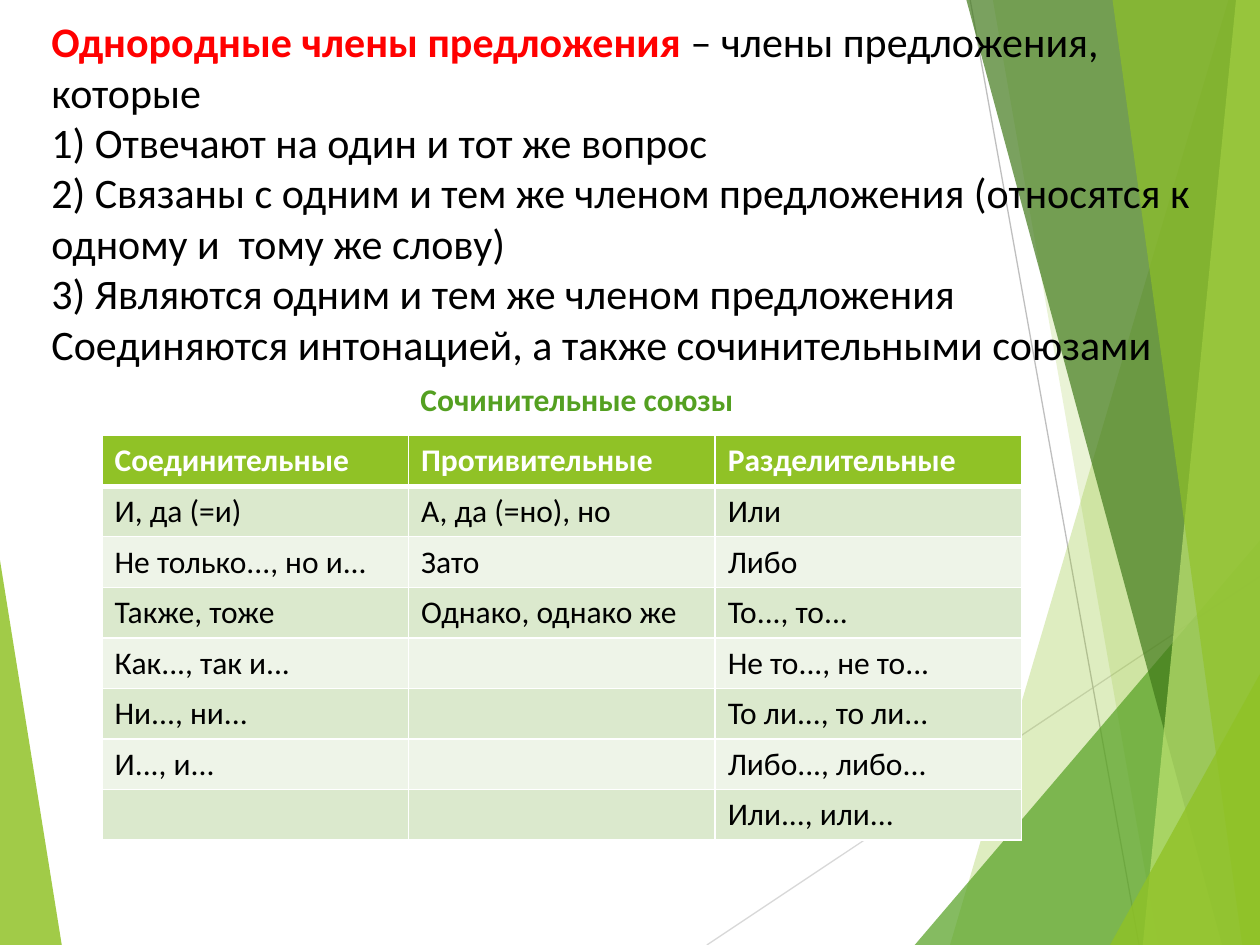
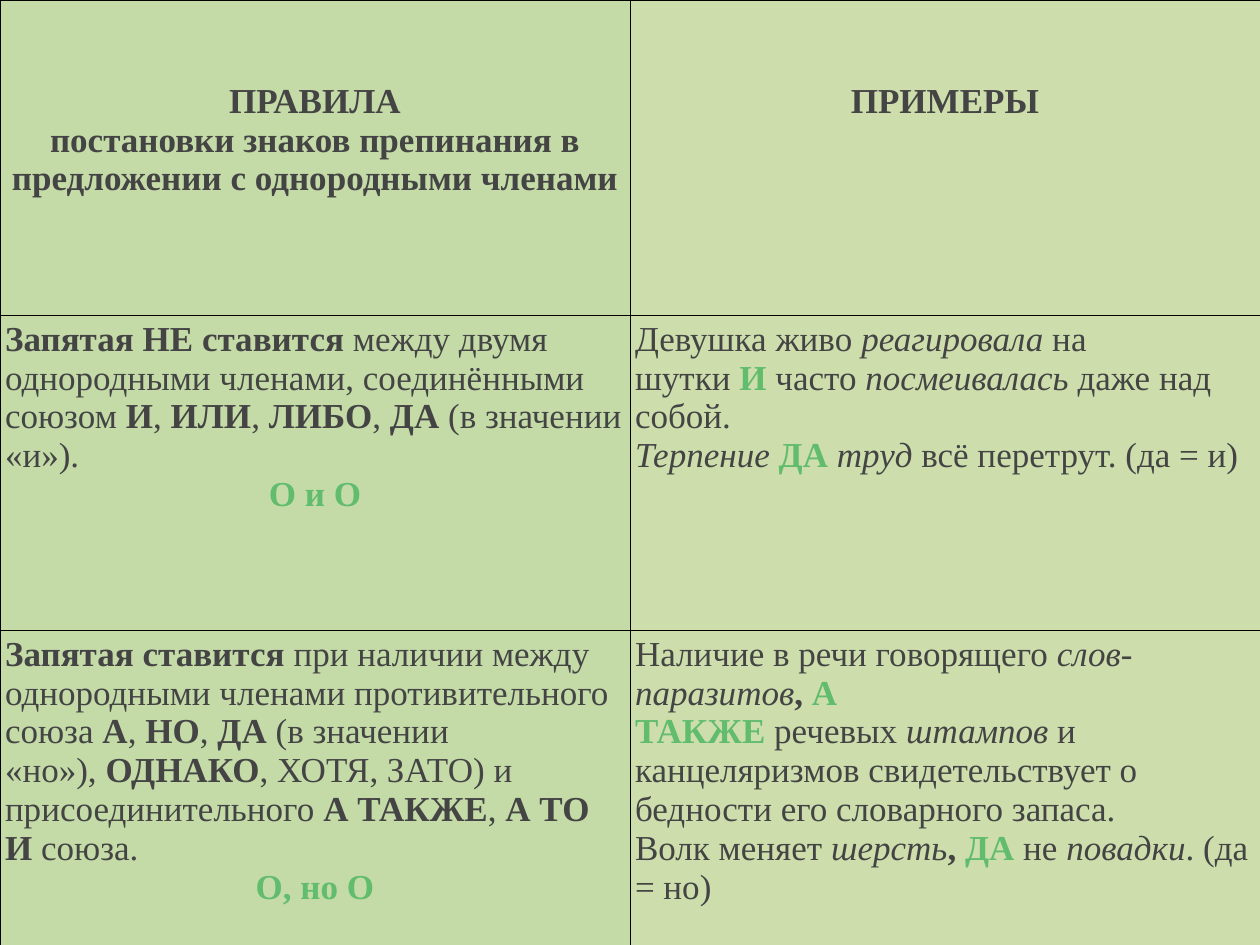
from lxml import etree
from pptx import Presentation
from pptx.dml.color import RGBColor
from pptx.enum.shapes import MSO_CONNECTOR
from pptx.enum.text import PP_ALIGN
from pptx.oxml.ns import qn
from pptx.util import Inches, Pt

STRAIGHT = MSO_CONNECTOR.STRAIGHT
CENTER, LEFT = PP_ALIGN.CENTER, PP_ALIGN.LEFT
rgb = RGBColor.from_string

LIME, GREEN, WHITE, BLACK = "90C226", "54A021", "FFFFFF", "000000"
SANS, SERIF = "Calibri", "Times New Roman"

# Each run starts with a mark: bold, italic, own colour
MARKS = {
    "-": (False, False, None),
    "*": (True, False, None),
    "/": (False, True, None),
    "+": (True, False, "61BD6D"),
    "!": (True, False, "FF0000"),
}
NBSP = chr(160)  # written as ~ in the texts below


def write(tf, lines, font, size, color, align=LEFT):
    """Fill a text frame with paragraphs of marked runs divided by |."""
    tf.word_wrap = True
    for i, line in enumerate(lines):
        p = tf.paragraphs[0] if i == 0 else tf.add_paragraph()
        p.alignment = CENTER if line.startswith("+") else align
        for part in line.split("|"):
            bold, italic, own_color = MARKS[part[0]]
            r = p.add_run()
            r.text = part[1:].replace("~", NBSP)
            r.font.name, r.font.size = font, Pt(size)
            r.font.bold, r.font.italic = bold, italic
            r.font.color.rgb = rgb(own_color or color)


def style_cell(cell, fill, line, widths):
    """Set the cell's fill and its left, right, top and bottom borders."""
    tcPr = cell._tc.get_or_add_tcPr()
    for side, width in zip("LRTB", widths):
        ln = etree.SubElement(tcPr, qn("a:ln" + side), w=str(Pt(width)))
        solid = etree.SubElement(ln, qn("a:solidFill"))
        etree.SubElement(solid, qn("a:srgbClr"), val=line)
    cell.fill.solid()
    cell.fill.fore_color.rgb = rgb(fill)


prs = Presentation()
prs.slide_width, prs.slide_height = Inches(10), Inches(7.5)
W, H = prs.slide_width, prs.slide_height
blank = prs.slide_layouts[6]
s = prs.slides.add_slide(blank)

# Shared backdrop: points in thousandths of the slide's width and height
RAYS = [
    ((561, 1000), (1000, 610), "D8D8D8"),
    ((770, 0), (904, 1000), "BFBFBF"),
]
FACETS = [
    (LIME, 84, [(0, 593), (49, 1000), (0, 1000)]),
    (LIME, 29, [(975, 0), (754, 1000), (1000, 1000), (1000, 0)]),
    (LIME, 19, [(788, 0), (919, 1000), (1000, 1000), (1000, 0)]),
    (GREEN, 71, [(726, 1000), (1000, 572), (1000, 1000)]),
    ("3F7818", 69, [(767, 0), (970, 1000), (1000, 1000), (1000, 0)]),
    ("BFE472", 69, [(981, 0), (907, 1000), (1000, 1000), (1000, 0)]),
    (LIME, 64, [(883, 0), (986, 1000), (1000, 1000), (1000, 0)]),
    (LIME, 79, [(881, 1000), (1000, 713), (1000, 1000)]),
]
backdrop = s.shapes.add_group_shape()
for (x1, y1), (x2, y2), color in RAYS:
    ray = backdrop.shapes.add_connector(
        STRAIGHT, W * x1 // 1000, H * y1 // 1000, W * x2 // 1000, H * y2 // 1000)
    ray.line.color.rgb, ray.line.width = rgb(color), Pt(0.75)
    etree.SubElement(ray.element.spPr, qn("a:effectLst"))
for color, opacity, points in FACETS:
    fb = backdrop.shapes.build_freeform(*points[0], scale=(W / 1000, H / 1000))
    fb.add_line_segments(points[1:])
    sp = fb.convert_to_shape()
    sp.shadow.inherit = False
    sp.line.fill.background()
    sp.fill.solid()
    sp.fill.fore_color.rgb = rgb(color)
    clr = next(sp.element.iter(qn("a:srgbClr")))
    etree.SubElement(clr, qn("a:alpha"), val=str(opacity * 1000))

# Move the backdrop to the master, so that every slide shows it
for i, props in enumerate(backdrop.element.iter(qn("p:cNvPr")), 100):
    props.set("id", str(i))
prs.slide_master.shapes.element.insert(2, backdrop.element)

# Slide 1: definition
sp = s.shapes.add_textbox(int(W * 0.031), int(H * 0.01), int(W * 0.957), int(H * 0.304))
write(sp.text_frame, [
    "!Однородные члены предложения|- – члены предложения, которые",
    "-1) Отвечают на один и тот же вопрос",
    "-2) Связаны с одним и тем же членом предложения "
    "(относятся к одному и  тому же слову)",
    "-3) Являются одним и тем же членом предложения",
    "-Соединяются интонацией, а также сочинительными союзами",
], SANS, 24, BLACK)

# Slide 1: table of conjunctions
CONJUNCTIONS = [
    ("Соединительные", "Противительные", "Разделительные"),
    ("И, да (=и)", "А, да (=но), но", "Или"),
    ("Не только..., но и...", "Зато", "Либо"),
    ("Также, тоже", "Однако, однако же", "То..., то..."),
    ("Как..., так и...", "", "Не то..., не то..."),
    ("Ни..., ни...", "", "То ли..., то ли..."),
    ("И..., и...", "", "Либо..., либо..."),
    ("", "", "Или..., или..."),
]
BANDS = ["EEF4E8", "DBE9CD"]
tbl = s.shapes.add_table(8, 3, int(W * 0.081), int(H * 0.461),
                         int(W * 0.73), int(H * 0.428)).table
for row, words in enumerate(CONJUNCTIONS):
    head = row == 0
    for col, word in enumerate(words):
        cell = tbl.cell(row, col)
        style_cell(cell, LIME if head else BANDS[row % 2], WHITE,
                   (1, 1, 3 if row == 1 else 1, 3 if head else 1))
        if word:
            write(cell.text_frame, [("*" if head else "-") + word],
                  SANS, 18, WHITE if head else BLACK)

# Slide 1: table caption
sp = s.shapes.add_textbox(int(W * 0.148), int(H * 0.396), int(W * 0.62), int(H * 0.053))
write(sp.text_frame, ["*Сочинительные союзы"], SANS, 18, GREEN, CENTER)

# Slide 2: rules and examples over the whole slide
RULES = [
    (["*ПРАВИЛА", "*постановки знаков препинания в предложении с однородными членами"],
     ["*ПРИМЕРЫ"]),
    (["*Запятая НЕ ставится|-~между двумя однородными членами, соединёнными союзом~"
      "|*И|-,~|*ИЛИ|-,~|*ЛИБО|-,~|*ДА|-~(в значении «и»).",
      "+O и O"],
     ["-Девушка живо~|/реагировала|-~на шутки~|+И|-~часто~|/посмеивалась"
      "|-~даже над собой.",
      "/Терпение~|+ДА~|/труд~|-всё перетрут. (да = и)"]),
    (["*Запятая ставится~|-при наличии между однородными членами противительного союза~"
      "|*А|-,~|*НО|-,~|*ДА~|-(в значении «но»),~|*ОДНАКО"
      "|-, ХОТЯ, ЗАТО) и присоединительного~|*А ТАКЖЕ|-,~|*А ТО И|-~союза.",
      "+O, но O"],
     ["-Наличие в речи говорящего~|/слов-паразитов|*,~|+А ТАКЖЕ|-~речевых~|/штампов"
      "|-~и канцеляризмов свидетельствует о бедности его словарного запаса.",
      "-Волк меняет~|/шерсть|*,~|+ДА|-~не~|/повадки|-. (да = но)"]),
]
s = prs.slides.add_slide(blank)
tbl = s.shapes.add_table(3, 2, 0, 0, W, H).table
for row, pair in enumerate(RULES):
    for col, lines in enumerate(pair):
        cell = tbl.cell(row, col)
        style_cell(cell, ["C4DBA8", "CDDEAC"][col], BLACK, [0.5] * 4)
        cell.margin_left = cell.margin_right = cell.margin_bottom = Inches(0.04)
        cell.margin_top = Inches(0.04 if row else 0.65)
        write(cell.text_frame, lines, SERIF, 20, "444444", LEFT if row else CENTER)

prs.save("out.pptx")
